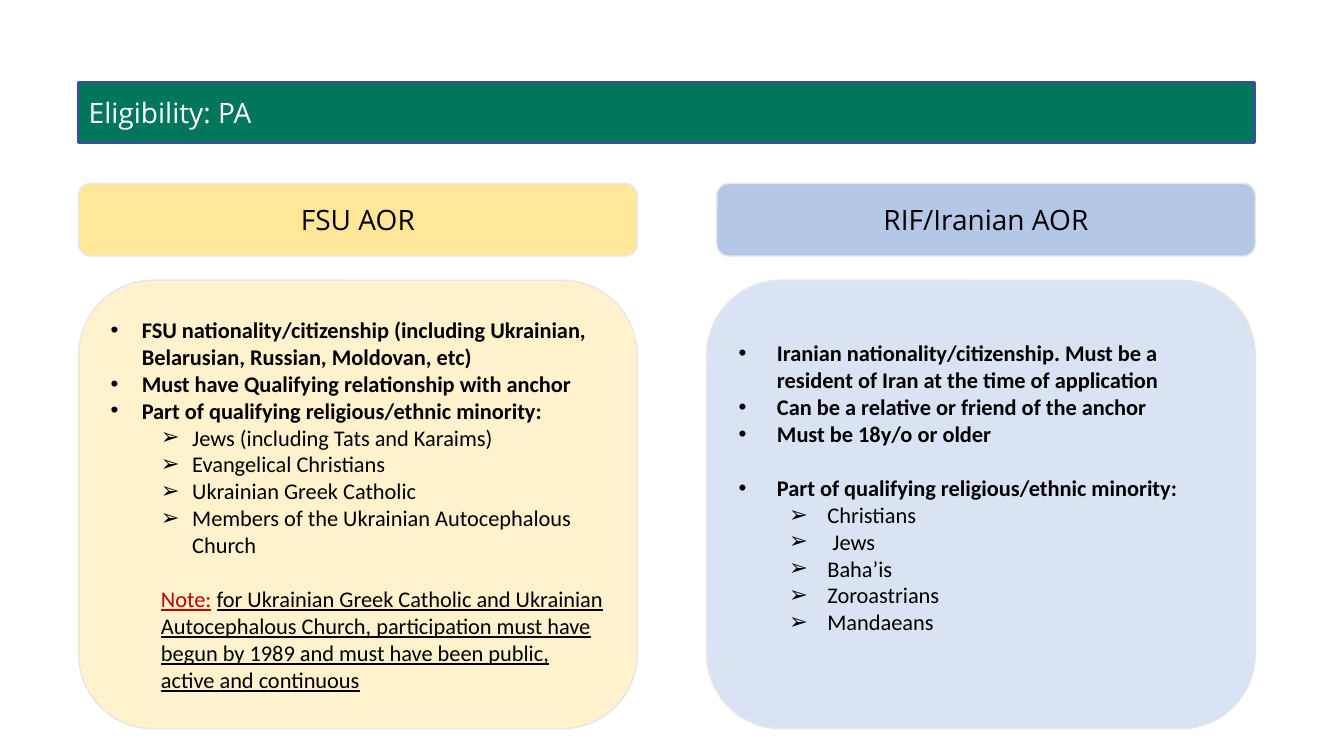
"""Build the eligibility slide comparing the FSU and RIF/Iranian areas."""
from lxml import etree
from pptx import Presentation
from pptx import util as u
from pptx.dml.color import RGBColor
from pptx.enum import text
from pptx.oxml.ns import qn

BLACK = RGBColor(0x00, 0x00, 0x00)
WHITE = RGBColor(0xFF, 0xFF, 0xFF)
RED = RGBColor(0xC0, 0x00, 0x00)
GREEN = RGBColor(0x00, 0x76, 0x5A)
NAVY = RGBColor(0x2F, 0x55, 0x97)
GREY = RGBColor(0xE7, 0xE6, 0xE6)
YELLOW = RGBColor(0xFF, 0xE6, 0x99)
CREAM = RGBColor(0xFF, 0xF2, 0xCC)
BLUE = RGBColor(0xB4, 0xC7, 0xE7)
PALE_BLUE = RGBColor(0xDA, 0xE3, 0xF3)

LEFT, RIGHT = text.PP_ALIGN.LEFT, text.PP_ALIGN.CENTER
BLANK_LINE = 19.5


def add_span(para, words, font="Calibri", size=16, color=BLACK, bold=False, underline=False):
    """Add one formatted run to a paragraph."""
    span = para.add_run()
    span.text = words
    span.font.name = font
    span.font.size = u.Pt(size)
    span.font.color.rgb = color
    span.font.bold = bold
    span.font.underline = underline


def format_para(para, align=LEFT, margin=0, hanging=0, bullet=None, before=0):
    """Set alignment, indents, space before and bullet of a paragraph."""
    para.alignment = align
    para.space_before = u.Pt(before)
    properties = para._p.get_or_add_pPr()
    properties.set("marL", str(u.Inches(margin)))
    properties.set("indent", str(u.Inches(-hanging)))
    if bullet:
        etree.SubElement(properties, qn("a:buFont"), typeface="Arial")
        etree.SubElement(properties, qn("a:buChar"), char=bullet)
    else:
        etree.SubElement(properties, qn("a:buNone"))


deck = Presentation()
deck.slide_width, deck.slide_height = u.Inches(13.33), u.Inches(7.5)
page = deck.slides.add_slide(deck.slide_layouts.get_by_name("Comparison"))
title, fsu_head, fsu_body, rif_head, rif_body = page.placeholders

panels = [
    (title, (0.78, 0.82, 11.66, 0.59), GREEN, NAVY, 2.25),
    (fsu_head, (0.78, 1.82, 5.54, 0.72), YELLOW, GREY, 1),
    (fsu_body, (0.78, 2.78, 5.54, 4.45), CREAM, GREY, 1),
    (rif_head, (7.11, 1.82, 5.34, 0.72), BLUE, GREY, 1),
    (rif_body, (7.01, 2.78, 5.44, 4.45), PALE_BLUE, GREY, 1),
]
for box, place, fill, line, width in panels:
    box.left, box.top, box.width, box.height = map(u.Inches, place)
    outline = etree.Element(qn("a:prstGeom"), prst="roundRect")
    etree.SubElement(outline, qn("a:avLst"))
    box._element.spPr.find(qn("a:xfrm")).addnext(outline)
    box.fill.solid()
    box.fill.fore_color.rgb = fill
    box.line.color.rgb = line
    box.line.width = u.Pt(width)
    frame = box.text_frame
    frame.word_wrap = True
    frame.auto_size = text.MSO_AUTO_SIZE.NONE
    frame.vertical_anchor = text.MSO_ANCHOR.MIDDLE

headings = [
    (title, "Eligibility: PA", LEFT, WHITE),
    (fsu_head, "FSU AOR", RIGHT, BLACK),
    (rif_head, "RIF/Iranian AOR", RIGHT, BLACK),
]
for box, words, align, color in headings:
    para = box.text_frame.paragraphs[0]
    format_para(para, align=align)
    add_span(para, words, font="Open Sans", size=20, color=color)

fsu_items = [
    (0, "FSU nationality/citizenship (including Ukrainian, Belarusian, Russian, Moldovan, etc)", 0),
    (0, "Must have Qualifying relationship with anchor", 0),
    (0, "Part of qualifying religious/ethnic minority:", 0),
    (1, "Jews (including Tats and Karaims)", 0),
    (1, "Evangelical Christians", 0),
    (1, "Ukrainian Greek Catholic", 0),
    (1, "Members of the Ukrainian Autocephalous Church", 0),
]
rif_items = [
    (0, "Iranian nationality/citizenship. Must be a resident of Iran at the time of application", 0),
    (0, "Can be a relative or friend of the anchor", 0),
    (0, "Must be 18y/o or older", 0),
    (0, "Part of qualifying religious/ethnic minority:", BLANK_LINE),
    (1, "Christians", 0),
    (1, " Jews", 0),
    (1, "Baha’is", 0),
    (1, "Zoroastrians", 0),
    (1, "Mandaeans", 0),
]
for box, items, hanging in ((fsu_body, fsu_items, 0.31), (rif_body, rif_items, 0.38)):
    frame = box.text_frame
    for number, (level, words, before) in enumerate(items):
        para = frame.add_paragraph() if number else frame.paragraphs[0]
        para.level = level
        format_para(para, margin=hanging + 0.5 * level, hanging=hanging,
                    bullet="•➢"[level], before=before)
        add_span(para, words, bold=level == 0)
rif_body.text_frame.margin_bottom = u.Inches(0.39)

note = fsu_body.text_frame.add_paragraph()
note.level = 1
format_para(note, margin=0.5, before=BLANK_LINE)
add_span(note, "Note:", color=RED, underline=True)
add_span(note, " ", color=RED)
add_span(note, "for Ukrainian Greek Catholic and Ukrainian Autocephalous Church, participation "
         "must have begun by 1989 and must have been public, active and continuous", underline=True)

deck.save("out.pptx")
